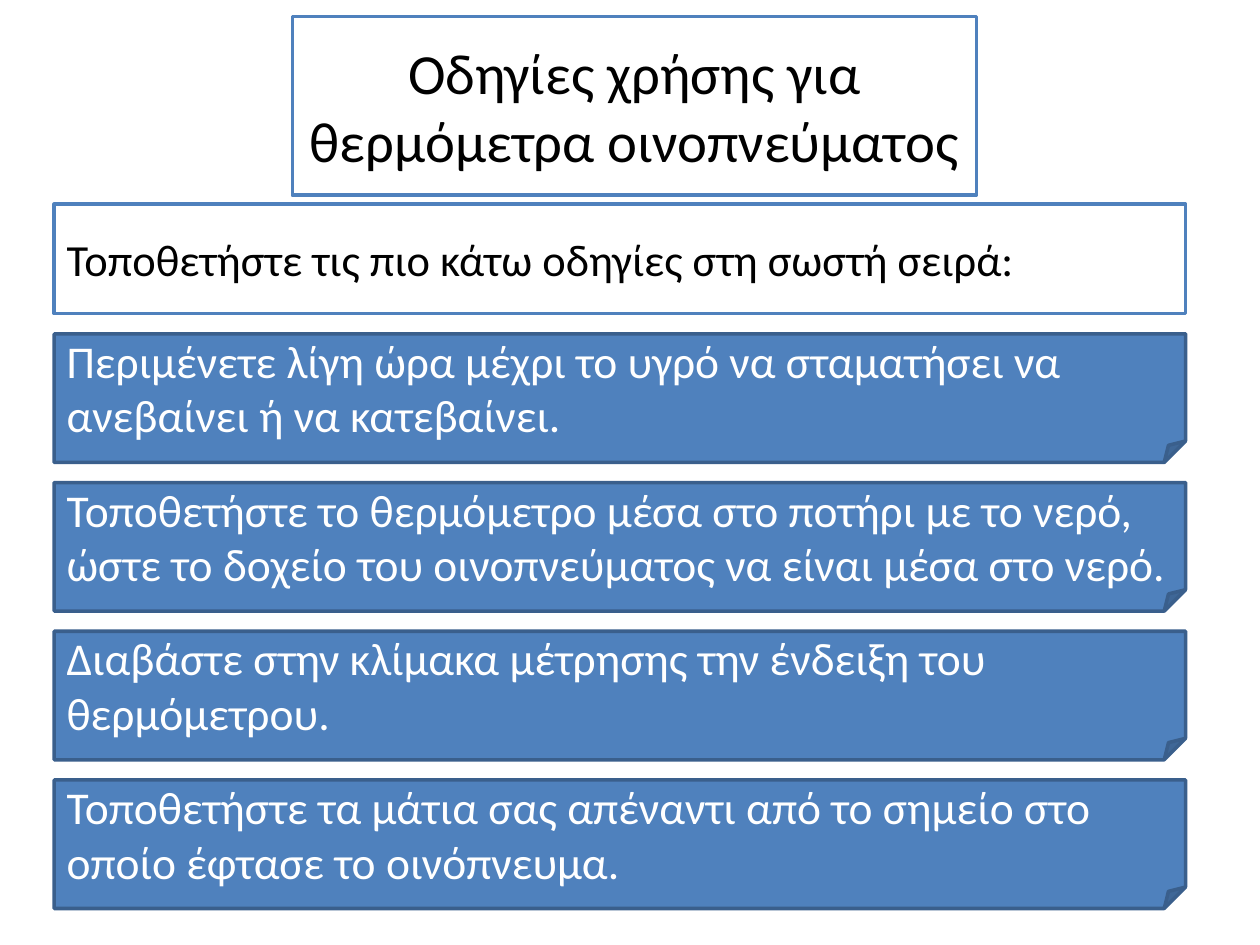
from pptx import Presentation
from pptx.dml.color import RGBColor
from pptx.enum.shapes import MSO_SHAPE
from pptx.enum.text import MSO_ANCHOR, PP_ALIGN
from pptx.util import Inches, Pt

RECT = MSO_SHAPE.RECTANGLE
FOLDED = MSO_SHAPE.FOLDED_CORNER
MIDDLE = MSO_ANCHOR.MIDDLE
LEFT = PP_ALIGN.LEFT
CENTER = PP_ALIGN.CENTER

WHITE = RGBColor(0xFF, 0xFF, 0xFF)
BLACK = RGBColor(0x00, 0x00, 0x00)
BLUE = RGBColor(0x4F, 0x81, 0xBD)
NAVY = RGBColor(0x3A, 0x5F, 0x8C)

FONT = "Calibri"
TITLE = "Οδηγίες χρήσης για θερμόμετρα οινοπνεύματος"
TASK = "Τοποθετήστε τις πιο κάτω οδηγίες στη σωστή σειρά:"
STEPS = [
    "Περιμένετε λίγη ώρα μέχρι το υγρό να σταματήσει να ανεβαίνει ή να κατεβαίνει.",
    "Τοποθετήστε το θερμόμετρο μέσα στο ποτήρι με το νερό, "
    "ώστε το δοχείο του οινοπνεύματος να είναι μέσα στο νερό.",
    "Διαβάστε στην κλίμακα μέτρησης την ένδειξη του θερμόμετρου.",
    "Τοποθετήστε τα μάτια σας απέναντι από το σημείο στο οποίο έφτασε το οινόπνευμα.",
]


def add_panel(slide, kind, box, text, size, fill, line, color, align=LEFT):
    """Add an outlined shape with text; box is left, top, width, height in inches."""
    panel = slide.shapes.add_shape(kind, *map(Inches, box))
    panel.shadow.inherit = False
    panel.fill.solid()
    panel.fill.fore_color.rgb = fill
    panel.line.color.rgb = line
    panel.line.width = Pt(2)
    frame = panel.text_frame
    frame.word_wrap = True
    frame.vertical_anchor = MIDDLE
    frame.text = text
    para = frame.paragraphs[0]
    para.alignment = align
    font = para.runs[0].font
    font.name = FONT
    font.size = Pt(size)
    font.color.rgb = color


def add_title(slide, box):
    add_panel(slide, RECT, box, TITLE, 32.4, WHITE, BLUE, BLACK, CENTER)


def add_task(slide, box):
    add_panel(slide, RECT, box, TASK, 25.4, WHITE, BLUE, BLACK)


def add_steps(slide, box, gap=0.16):
    """Stack the steps as equal cards that fill the box."""
    left, top, width, height = box
    card = (height - gap * (len(STEPS) - 1)) / len(STEPS)
    for index, step in enumerate(STEPS):
        place = (left, top + index * (card + gap), width, card)
        add_panel(slide, FOLDED, place, step, 26, BLUE, NAVY, WHITE)


def main():
    deck = Presentation()
    deck.slide_width = Inches(10)
    deck.slide_height = Inches(7.5)
    slide = deck.slides.add_slide(deck.slide_layouts[6])
    add_title(slide, (2.32, 0.13, 5.43, 1.42))
    add_task(slide, (0.43, 1.62, 8.98, 0.87))
    add_steps(slide, (0.43, 2.65, 8.98, 4.56))
    deck.save("out.pptx")


if __name__ == "__main__":
    main()
